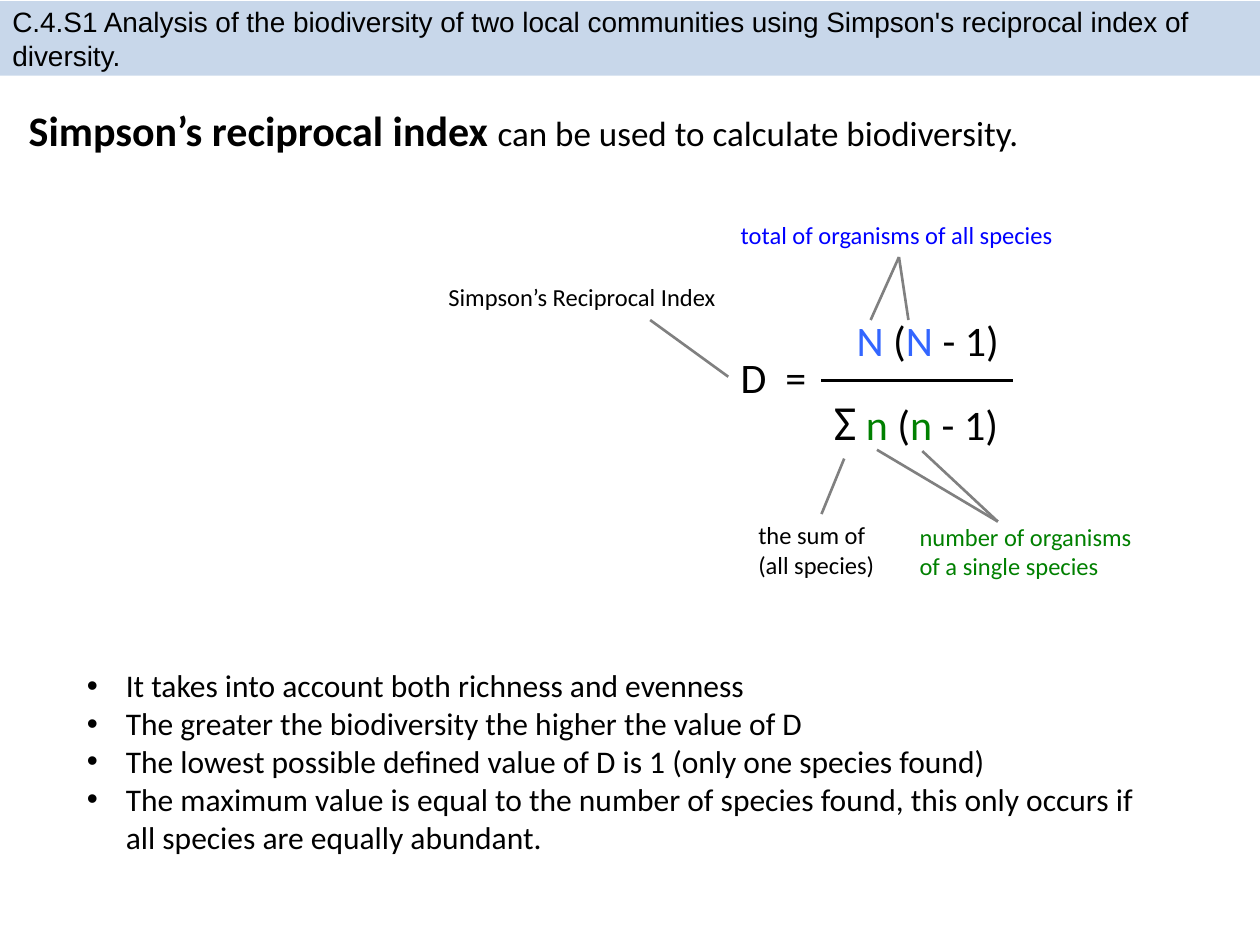
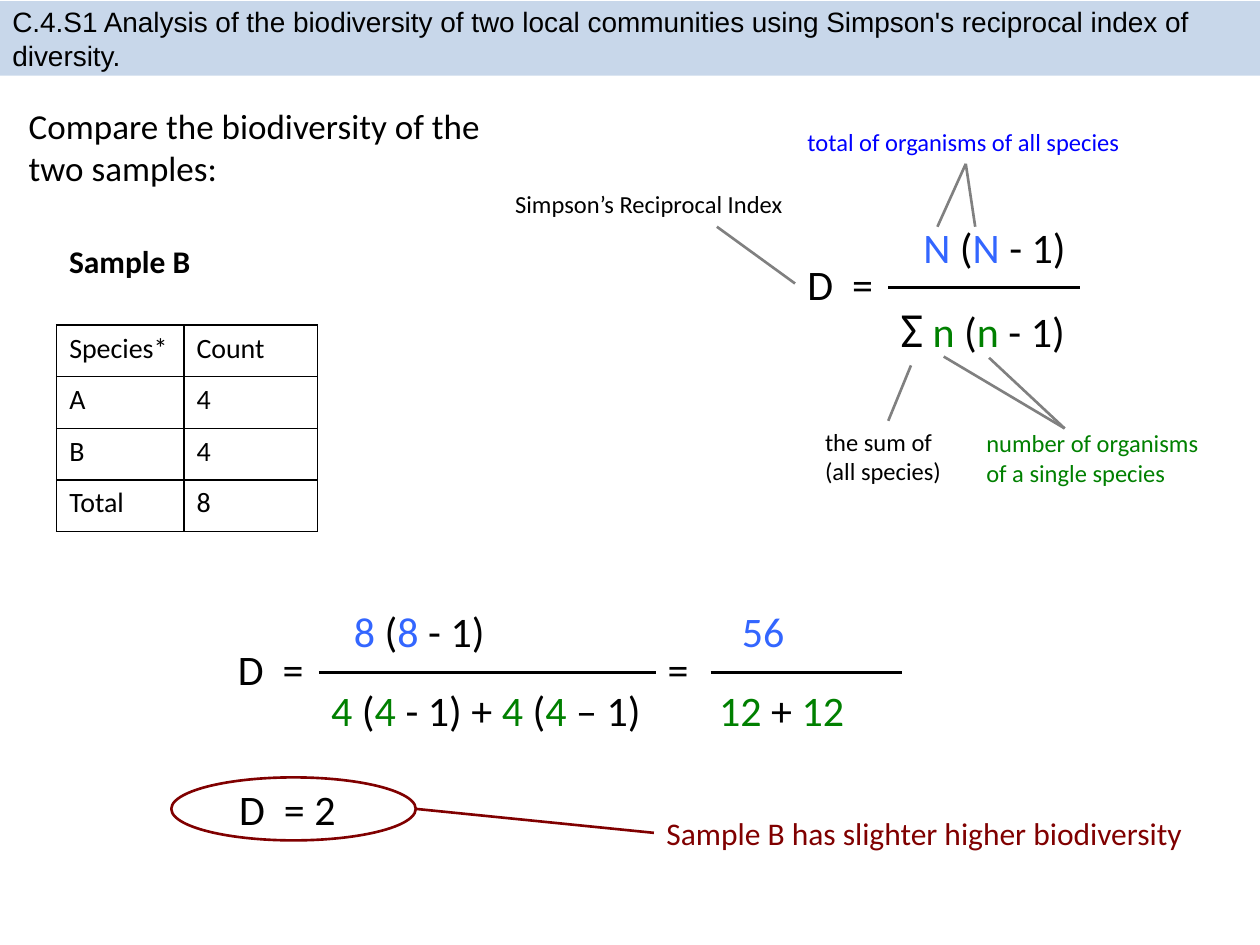
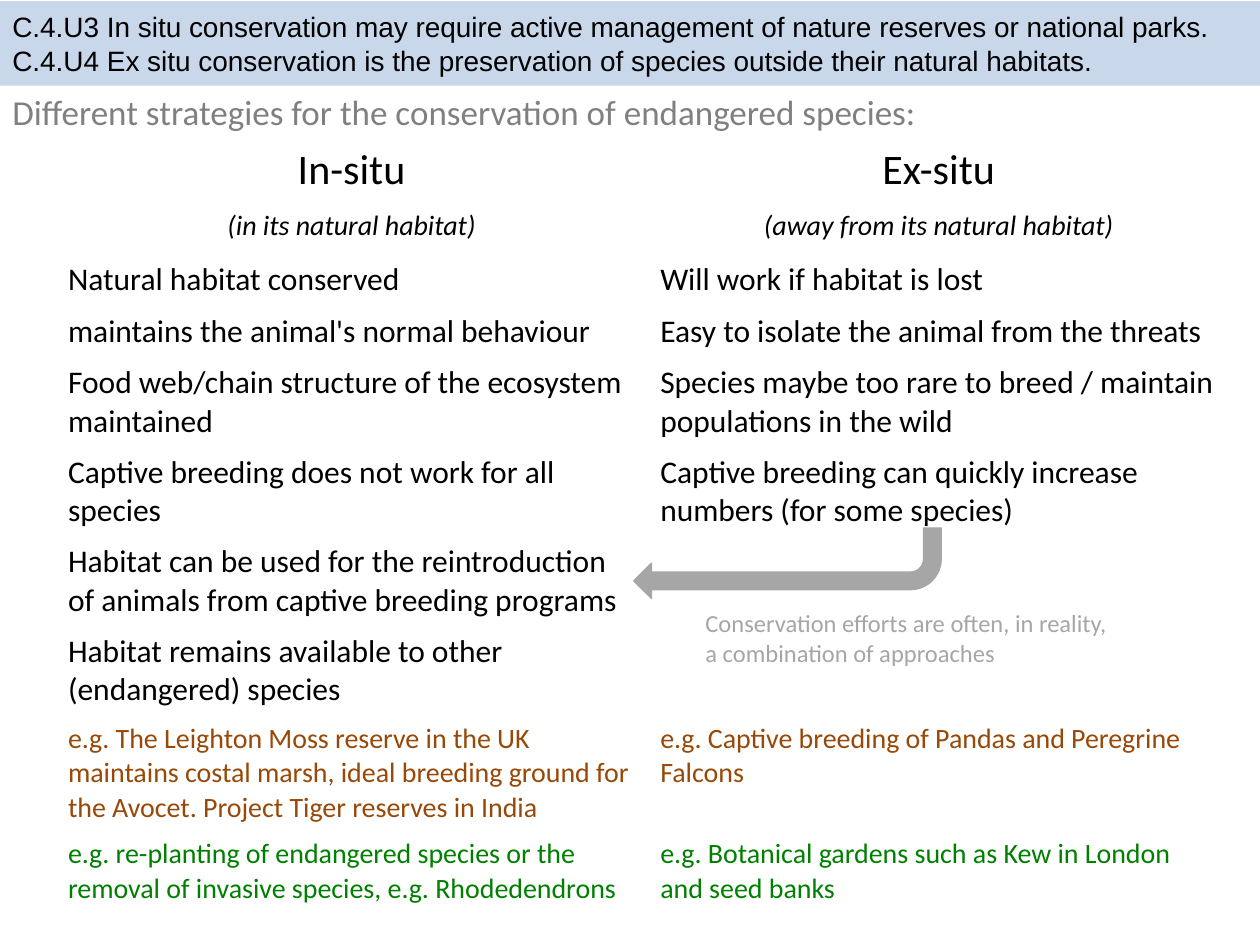
from lxml.etree import SubElement as Sub
from pptx import Presentation
from pptx.dml.color import RGBColor as RGB
from pptx.enum.shapes import MSO_CONNECTOR as LINK, MSO_SHAPE as KIND
from pptx.enum.text import MSO_ANCHOR as ANCHOR, PP_ALIGN as ALIGN
from pptx.oxml.ns import qn
from pptx.util import Inches, Pt

HUE = {"band": "B9CDE5", "black": "000000", "gray": "808080", "pale": "A6A6A6",
       "blue": "3366FF", "deep": "0000FF", "green": "008000",
       "red": "800000", "brown": "984807"}
BLUE, GREEN = {"hue": "blue"}, {"hue": "green"}


def put(host, *lines, box=None, size=14, hue="black", font="Calibri", bold=False,
        italic=False, align=ALIGN.LEFT, wrap=True, bullet=False):
    """Write lines, each a string or a list of (text, format) runs."""
    if box:
        host = host.shapes.add_textbox(*map(Inches, box))
    frame = host.text_frame
    frame.word_wrap = wrap
    for i, line in enumerate(lines):
        para = frame.paragraphs[0] if i == 0 else frame.add_paragraph()
        para.alignment = align
        if bullet:
            props = para._p.get_or_add_pPr()
            props.set("marL", str(Inches(0.31)))
            props.set("indent", str(-Inches(0.31)))
            Sub(props, qn("a:buFont"), typeface="Arial")
            Sub(props, qn("a:buChar"), char="•")
        for words, form in [(line, {})] if isinstance(line, str) else line:
            run = para.add_run()
            run.text = words
            run.font.name = font
            run.font.size = Pt(form.get("size", size))
            run.font.bold = form.get("bold", bold)
            run.font.italic = italic
            run.font.color.rgb = RGB.from_string(HUE[form.get("hue", hue)])
    return host


def draw(page, start, end, hue="gray", host=None, site=0):
    """Draw a line, joined at its start to a side of host if given."""
    line = page.shapes.add_connector(LINK.STRAIGHT, *map(Inches, start + end))
    line.line.color.rgb = RGB.from_string(HUE[hue])
    line.line.width = Pt(1.5)
    Sub(line._element.spPr, qn("a:effectLst"))
    if host is not None:
        line.begin_connect(host, site)


deck = Presentation()
deck.slide_width, deck.slide_height = Inches(10), Inches(7.5)

# Title bands
topic = ["C.4.S1 Analysis of the biodiversity of two local communities using "
         "Simpson's reciprocal index of diversity."]
units = ["C.4.U3 In situ conservation may require active management of nature "
         "reserves or national parks.",
         "C.4.U4 Ex situ conservation is the preservation of species outside "
         "their natural habitats."]
pages = []
for lines, high in [(topic, 0.59), (topic, 0.59), (units, 0.67)]:
    page = deck.slides.add_slide(deck.slide_layouts[6])
    band = page.shapes.add_shape(KIND.RECTANGLE, 0, Inches(0.01), Inches(10), Inches(high))
    band.shadow.inherit = False
    band.fill.solid()
    band.fill.fore_color.rgb = RGB.from_string(HUE["band"])
    Sub(band._element.spPr.find(".//" + qn("a:srgbClr")), qn("a:alpha"), val="78000")
    band.line.fill.background()
    band.text_frame.vertical_anchor = ANCHOR.MIDDLE
    put(band, *lines, size=16, font="Arial")
    pages.append(page)
index, sample, saving = pages

# Labelled formula on the first two slides
for page, x, y in [(index, 5.78, 1.7), (sample, 6.31, 0.96)]:
    sign = put(page, "D  =", box=(x, y + 1.04, 0.73, 0.5), size=24, wrap=False)
    put(page, [("N ", BLUE), ("(", {}), ("N ", BLUE), ("- 1)", {})],
        box=(x + 0.92, y + 0.75, 1.34, 0.5), size=24, wrap=False)
    put(page, [("Σ", {"size": 28}), (" ", {}), ("n ", GREEN), ("(", {}),
               ("n ", GREEN), ("- 1)", {})],
        box=(x + 0.74, y + 1.36, 1.52, 0.57), size=24, wrap=False)
    draw(page, (x + 0.74, y + 1.32), (x + 2.26, y + 1.32), "black")
    put(page, "Simpson’s Reciprocal Index", box=(x - 2.32, y + 0.49, 2.36, 0.34), wrap=False)
    total = put(page, "total of organisms of all species",
                box=(x, y, 2.71, 0.34), hue="deep", wrap=False)
    put(page, "number of organisms of a single species",
        box=(x + 1.42, y + 2.39, 1.97, 0.57), hue="green")
    summed = put(page, "the sum of (all species)", box=(x + 0.14, y + 2.38, 1.2, 0.57))
    for dx in (1.13, 1.43):
        draw(page, (x + 1.36, y + 0.34), (x + dx, y + 0.84), host=total, site=2)
    for dx, dy in [(1.18, 1.87), (1.54, 1.88)]:
        draw(page, (x + 2.14, y + 2.44), (x + dx, y + dy))
    draw(page, (x, y + 1.29), (x - 0.62, y + 0.84), host=sign, site=1)
    draw(page, (x + 0.74, y + 2.38), (x + 0.92, y + 1.94), host=summed, site=0)

# Slide 1: lead and key points
put(index, [("Simpson’s reciprocal index ", {"size": 24, "bold": True}),
            ("can be used to calculate biodiversity.", {})],
    box=(0.13, 0.78, 9.04, 0.5), size=20)
put(index, "It takes into account both richness and evenness",
    "The greater the biodiversity the higher the value of D",
    "The lowest possible defined value of D is 1 (only one species found)",
    "The maximum value is equal to the number of species found, this only occurs "
    "if all species are equally abundant.",
    box=(0.59, 5.24, 8.58, 1.62), size=18, bullet=True)

# Slide 2: sample counts
put(sample, "Compare the biodiversity of the two samples:", box=(0.13, 0.78, 4.14, 0.77), size=20)
put(sample, "Sample B", box=(0.45, 1.87, 1.17, 0.4), size=18, bold=True, wrap=False)
counts = [("Species*", "Count"), ("A", "4"), ("B", "4"), ("Total", "8")]
count_form = [{"size": 16}] * len(counts)

# Slide 3: strategies, with one format for each row
plans = [
    ("In-situ", "Ex-situ"),
    ("(in its natural habitat)", "(away from its natural habitat)"),
    ("Natural habitat conserved", "Will work if habitat is lost"),
    ("maintains the animal's normal behaviour", "Easy to isolate the animal from the threats"),
    ("Food web/chain structure of the ecosystem maintained",
     "Species maybe too rare to breed / maintain populations in the wild"),
    ("Captive breeding does not work for all species",
     "Captive breeding can quickly increase numbers (for some species)"),
    ("Habitat can be used for the reintroduction of animals from captive breeding programs", ""),
    ("Habitat remains available to other (endangered) species", ""),
    ("e.g. The Leighton Moss reserve in the UK maintains costal marsh, ideal breeding "
     "ground for the Avocet. Project Tiger reserves in India",
     "e.g. Captive breeding of Pandas and Peregrine Falcons"),
    ("e.g. re-planting of endangered species or the removal of invasive species, "
     "e.g. Rhodedendrons",
     "e.g. Botanical gardens such as Kew in London and seed banks"),
]
plan_form = [{"size": 24, "align": ALIGN.CENTER},
             {"size": 16, "align": ALIGN.CENTER, "italic": True},
             *[{"size": 18}] * 6,
             {"size": 16, "hue": "brown"}, {"size": 16, "hue": "green"}]

# Both tables
for page, rows, forms, left, top, wide, edged in [
        (sample, counts, count_form, 0.45, 2.58, (1.01, 1.06), True),
        (saving, plans, plan_form, 0.44, 1.1, (4.7, 4.62), False)]:
    grid = page.shapes.add_table(len(rows), 2, Inches(left), Inches(top), Inches(sum(wide)),
                                 Inches(0.41 * len(rows))).table
    grid.first_row = grid.horz_banding = False
    for col, width in zip(grid.columns, wide):
        col.width = Inches(width)
    for r, (row, form) in enumerate(zip(rows, forms)):
        grid.rows[r].height = Inches(0.41)
        for c, words in enumerate(row):
            cell = grid.cell(r, c)
            if edged:
                for side in ("a:lnL", "a:lnR", "a:lnT", "a:lnB"):
                    edge = Sub(cell._tc.get_or_add_tcPr(), qn(side), w=str(Pt(1)))
                    Sub(Sub(edge, qn("a:solidFill")), qn("a:srgbClr"), val=HUE["black"])
            cell.fill.background()
            if words:
                put(cell, words, **form)

# Slide 2: worked sum
for words, x, y, w in [
        ("D  =", 1.79, 5.06, 0.73),
        ([("8 ", BLUE), ("(", {}), ("8 ", BLUE), ("- 1)", {})], 2.71, 4.76, 1.25),
        ([("4 ", GREEN), ("(", {}), ("4 ", GREEN), ("- 1) + ", {}),
          ("4 ", GREEN), ("(", {}), ("4 ", GREEN), ("– 1)", {})], 2.53, 5.38, 2.68),
        ("=", 5.2, 5.06, 0.38),
        ([("56", BLUE)], 5.79, 4.76, 0.54),
        ([("12", GREEN), (" + ", {}), ("12", GREEN)], 5.61, 5.38, 1.2),
        ("D  = 2", 1.8, 6.17, 0.98)]:
    put(sample, words, box=(x, y, w, 0.5), size=24, wrap=False)
for x, end in [(2.53, 5.21), (5.64, 7.16)]:
    draw(sample, (x, 5.34), (end, 5.34), "black")

# Slide 2: ringed result
note = put(sample, "Sample B has slighter higher biodiversity",
           box=(5.19, 6.41, 4.69, 0.4), size=18, hue="red")
ring = sample.shapes.add_shape(KIND.OVAL, *map(Inches, (1.36, 6.17, 1.94, 0.5)))
ring.shadow.inherit = False
ring.fill.background()
ring.line.color.rgb = RGB.from_string(HUE["red"])
ring.line.width = Pt(1.5)
draw(sample, (5.19, 6.61), (3.3, 6.42), "red", host=note, site=1)

# Slide 3: lead, arrow and remark
put(saving, "Different strategies for the conservation of endangered species:",
    box=(0, 0.67, 7.48, 0.44), size=20, hue="gray", wrap=False)
arrow = saving.shapes.add_shape(KIND.BENT_ARROW, *map(Inches, (5.03, 4.19, 2.44, 0.56)))
arrow.rotation = 180
arrow.shadow.inherit = False
arrow.fill.solid()
arrow.fill.fore_color.rgb = arrow.line.color.rgb = RGB.from_string(HUE["pale"])
arrow.line.width = Pt(0.75)
put(saving, "Conservation efforts are often, in reality, a combination of approaches",
    box=(5.5, 4.78, 3.39, 0.57), hue="pale")

deck.save("out.pptx")
